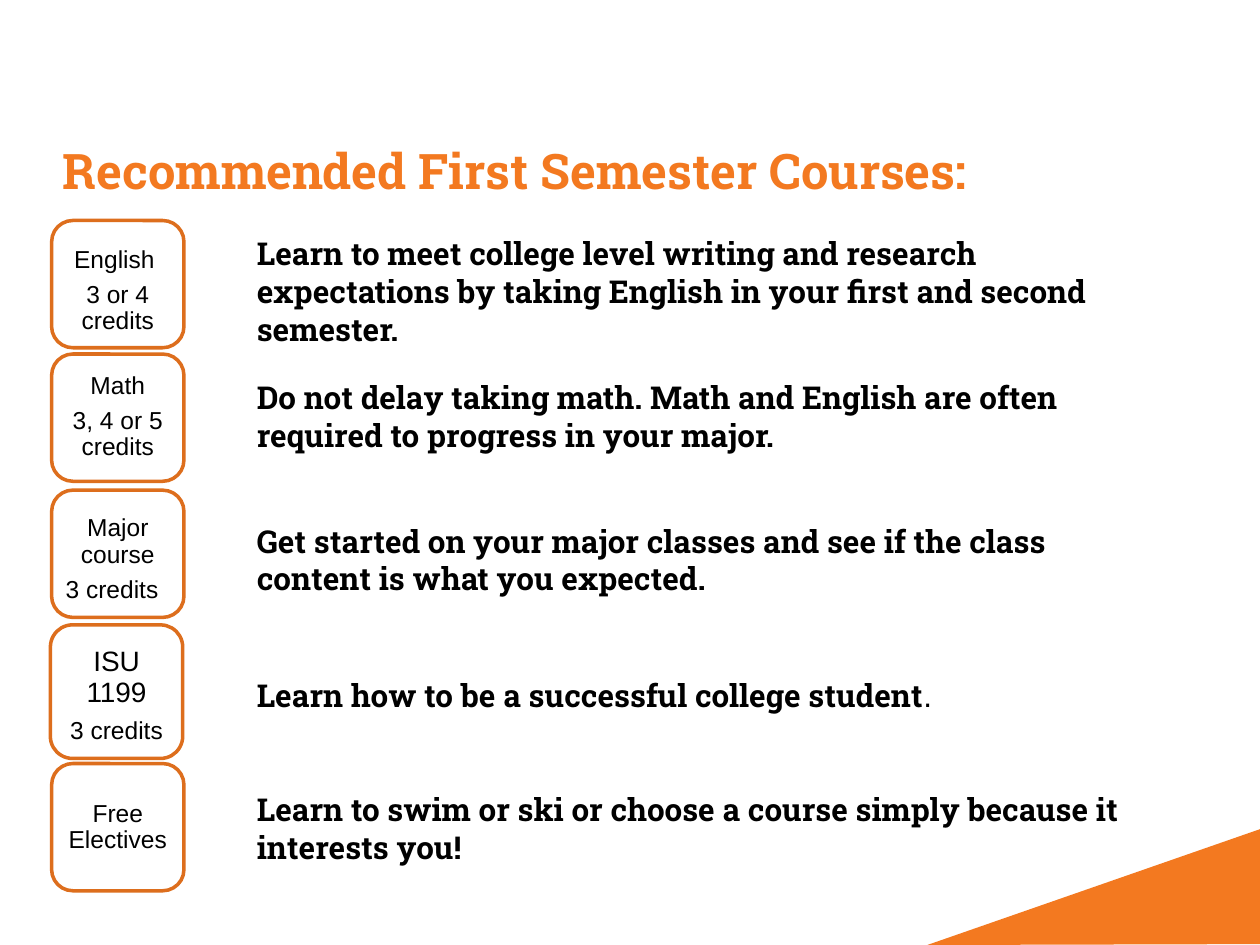
"""Build a slide of recommended first semester courses."""
from collections import namedtuple

from pptx import Presentation
from pptx.dml.color import RGBColor
from pptx.enum.shapes import MSO_SHAPE
from pptx.enum.text import MSO_ANCHOR, PP_ALIGN
from pptx.util import Pt

ORANGE = RGBColor(0xF3, 0x79, 0x20)
OUTLINE = RGBColor(0xDD, 0x6E, 0x1D)
BLACK = RGBColor(0, 0, 0)
WHITE = RGBColor(0xFF, 0xFF, 0xFF)
HEADING_FONT = "Roboto Slab"
LABEL_FONT = "Arial"

Course = namedtuple(
    "Course",
    "labels badge label_box advice advice_box name_size inset",
    defaults=(14, 4.4),
)

COURSES = [
    Course(["English ", "3 or 4 credits"], (29.5, 126, 75.6, 72.7), (33.1, 133.2, 68.4, 66.2),
           "Learn to meet college level writing and research expectations "
           "by taking English in your first and second semester.",
           (139.7, 130.3, 529.2, 72.7)),
    Course(["Math", "3, 4 or 5 credits"], (29.5, 202.3, 75.6, 72.7), (33.1, 205.2, 68.4, 66.2),
           "Do not delay taking math. Math and English are often required "
           "to progress in your major.",
           (139.7, 212.4, 520.6, 51)),
    Course(["Major course", "3 credits\t"], (29.5, 280.1, 75.6, 72.7), (33.1, 286.6, 68.4, 66.2),
           "Get started on your major classes and see if the class content "
           "is what you expected.",
           (139.7, 294.5, 485.3, 51)),
    Course(["ISU 1199", "3 credits"], (28.8, 357.1, 75.6, 76.3), (32.4, 368.6, 68.4, 58.3),
           "Learn how to be a successful college student",
           (139.7, 383, 451.4, 29), 16, 5),
    Course(["Free Electives"], (29.5, 436.3, 75.6, 72.7), (33.1, 439.9, 68.4, 66.2),
           "Learn to swim or ski or choose a course simply because it interests you!",
           (139.7, 447.8, 529.2, 51)),
]


def points(box):
    """Convert numbers to lengths in points."""
    return [Pt(value) for value in box]


def add_text(paragraph, text, *, size, font=HEADING_FONT, color=BLACK, bold=True):
    """Add a formatted run of text to a paragraph."""
    run = paragraph.add_run()
    run.text = text
    run.font.size = Pt(size)
    run.font.name = font
    run.font.bold = bold
    run.font.color.rgb = color


def add_text_frame(shapes, box):
    """Add a wrapping text box and return its text frame."""
    frame = shapes.add_textbox(*points(box)).text_frame
    frame.word_wrap = True
    return frame


def add_corner(slide):
    """Draw the orange wedge in the bottom right corner."""
    builder = slide.shapes.build_freeform(Pt(529.9), Pt(540))
    builder.add_line_segments([points((720, 473.8)), points((720, 539.5))], close=True)
    shape = builder.convert_to_shape()
    shape.shadow.inherit = False
    shape.fill.solid()
    shape.fill.fore_color.rgb = ORANGE
    shape.line.fill.background()


def add_badge(slide, course):
    """Draw a rounded course badge with its centred label."""
    group = slide.shapes.add_group_shape()
    shape = group.shapes.add_shape(MSO_SHAPE.ROUNDED_RECTANGLE, *points(course.badge))
    shape.shadow.inherit = False
    shape.fill.solid()
    shape.fill.fore_color.rgb = WHITE
    shape.line.color.rgb = OUTLINE
    shape.line.width = Pt(2)

    frame = add_text_frame(group.shapes, course.label_box)
    frame.vertical_anchor = MSO_ANCHOR.MIDDLE
    frame.margin_left = frame.margin_right = Pt(course.inset)
    frame.margin_top = frame.margin_bottom = Pt(2.2)
    for index, label in enumerate(course.labels):
        paragraph = frame.add_paragraph() if index else frame.paragraphs[0]
        size = 14 if index else course.name_size
        paragraph.alignment = PP_ALIGN.CENTER
        paragraph.line_spacing = 0.9
        paragraph.space_after = Pt(0.35 * size)
        add_text(paragraph, label, size=size, font=LABEL_FONT, bold=False)


def add_advice(slide, course):
    """Write the advice beside a course badge."""
    paragraph = add_text_frame(slide.shapes, course.advice_box).paragraphs[0]
    add_text(paragraph, course.advice, size=18)
    if not course.advice.endswith((".", "!")):
        add_text(paragraph, ".", size=18, font=LABEL_FONT, bold=False)


def main():
    """Build and save the presentation."""
    presentation = Presentation()
    presentation.slide_width, presentation.slide_height = Pt(720), Pt(540)
    slide = presentation.slides.add_slide(presentation.slide_layouts[6])
    add_corner(slide)
    for course in COURSES:
        add_badge(slide, course)
        add_advice(slide, course)
    title = add_text_frame(slide.shapes, (28.8, 77, 562.3, 41))
    add_text(title.paragraphs[0], "Recommended First Semester Courses:", size=28, color=ORANGE)
    presentation.save("out.pptx")


if __name__ == "__main__":
    main()
